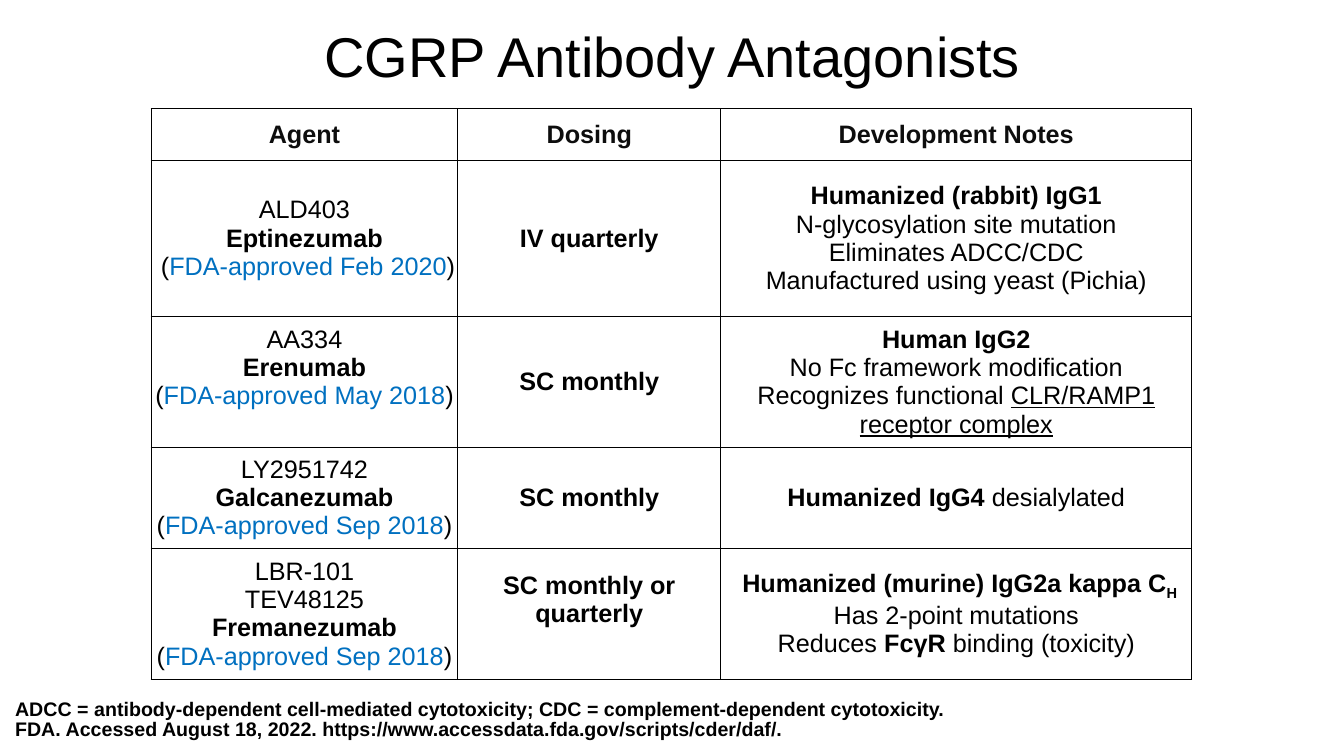
import pptx
import pptx.dml.color
import pptx.enum.text
import pptx.oxml
import pptx.oxml.ns
import pptx.util

WIDTH, HEIGHT = 13.33, 7.5
COLUMNS = [3.04, 2.61, 4.67]
ROWS = [0.51, 1.55, 1.27, 0.97, 1.26]
BLANK_LINE = 0.28
CENTER = pptx.enum.text.PP_ALIGN.CENTER
MIDDLE = pptx.enum.text.MSO_ANCHOR.MIDDLE
BOTTOM = pptx.enum.text.MSO_ANCHOR.BOTTOM
HEADINGS = ["Agent", "Dosing", "Development Notes"]

AGENTS = [
    (["ALD403"], "Eptinezumab", " (", "Feb 2020", "IV quarterly", [
        [("Humanized (rabbit) IgG1", "bold")],
        [("N-glycosylation site mutation", "")],
        [("Eliminates ADCC/CDC", "")],
        [("Manufactured using yeast (Pichia)", "")]]),
    (["AA334"], "Erenumab", "(", "May 2018", "SC monthly", [
        [("Human IgG2", "bold")],
        [("No Fc framework modification", "")],
        [("Recognizes functional ", ""), ("CLR/RAMP1 receptor complex", "underline")]]),
    (["LY2951742"], "Galcanezumab", "(", "Sep 2018", "SC monthly", [
        [("Humanized IgG4", "bold"), (" desialylated", "")]]),
    (["LBR-101", "TEV48125"], "Fremanezumab", "(", "Sep 2018",
     "SC monthly or quarterly", [
        [(" Humanized (murine) IgG2a kappa C", "bold"), ("H", "bold subscript")],
        [("Has 2-point mutations", "")],
        [("Reduces ", ""), ("FcγR ", "bold"), ("binding (toxicity)", "")]]),
]


def inches(value):
    return pptx.util.Inches(value)


def color(hex_code):
    return pptx.dml.color.RGBColor.from_string(hex_code)


def style_font(font, size, hex_code="000000", bold=False):
    font.name = "Arial"
    font.size = pptx.util.Pt(size)
    font.bold = bold
    font.color.rgb = color(hex_code)


def set_margins(holder, side, top, bottom):
    holder.margin_left = holder.margin_right = inches(side)
    holder.margin_top, holder.margin_bottom = inches(top), inches(bottom)


def place(shape, left, top, width, height):
    shape.left, shape.top = inches(left), inches(top)
    shape.width, shape.height = inches(width), inches(height)


def add_title(page, text):
    title = page.shapes.title
    place(title, 0, 0, WIDTH, 1.17)
    frame = title.text_frame
    frame.text = text
    frame.vertical_anchor = MIDDLE
    set_margins(frame, 0.05, 0.05, 0.05)
    para = frame.paragraphs[0]
    para.alignment = CENTER
    para.line_spacing = 0.9
    style_font(para.runs[0].font, 40)


def add_footnote(page, text):
    box = page.shapes.add_textbox(0, inches(6.92), inches(WIDTH), inches(0.58))
    frame = box.text_frame
    frame.word_wrap = True
    frame.vertical_anchor = BOTTOM
    set_margins(frame, 0.15, 0.15, 0.15)
    para = frame.paragraphs[0]
    para.text = text
    para.line_spacing = 0.85
    for span in para.runs:
        style_font(span.font, 14, bold=True)


def add_borders(cell):
    properties = cell._tc.get_or_add_tcPr()
    namespace = pptx.oxml.ns.nsdecls("a")
    for position, side in enumerate("LRTB"):
        line = pptx.oxml.parse_xml(
            f'<a:ln{side} {namespace} w="12700"><a:solidFill>'
            f'<a:srgbClr val="000000"/></a:solidFill></a:ln{side}>')
        properties.insert(position, line)


def fill_cell(cell, paragraphs, side=0, bottom=0.05, hex_code="000000"):
    cell.fill.background()
    add_borders(cell)
    cell.vertical_anchor = MIDDLE
    set_margins(cell, side, 0.05, bottom)
    frame = cell.text_frame
    for number, spans in enumerate(paragraphs):
        para = frame.add_paragraph() if number else frame.paragraphs[0]
        para.alignment = CENTER
        for text, style in spans:
            span = para.add_run()
            span.text = text
            style_font(span.font, 18, "0070C0" if "approval" in style else hex_code,
                       "bold" in style)
            if "underline" in style:
                span.font.underline = True
            if "subscript" in style:
                span._r.get_or_add_rPr().set("baseline", "-25000")


def add_agent_table(page):
    shape = page.shapes.add_table(len(ROWS), len(COLUMNS), inches(1.5), inches(1.08),
                                  inches(sum(COLUMNS)), inches(sum(ROWS)))
    table = shape.table
    table.first_row = table.horz_banding = False
    for column, width in zip(table.columns, COLUMNS):
        column.width = inches(width)
    for row, height in zip(table.rows, ROWS):
        row.height = inches(height)
    for index, heading in enumerate(HEADINGS):
        fill_cell(table.cell(0, index), [[(heading, "bold")]], hex_code="0D0D0D")
    for row, (codes, name, opening, date, dosing, notes) in enumerate(AGENTS, 1):
        agent = [[(code, "")] for code in codes]
        agent.append([(name, "bold")])
        agent.append([(opening, ""), (f"FDA-approved {date}", "approval"), (")", "")])
        raised_agent = BLANK_LINE if name == "Erenumab" else 0
        raised_dosing = BLANK_LINE if name == "Fremanezumab" else 0
        fill_cell(table.cell(row, 0), agent, bottom=0.05 + raised_agent)
        fill_cell(table.cell(row, 1), [[(dosing, "bold")]], bottom=0.05 + raised_dosing)
        fill_cell(table.cell(row, 2), notes, side=0.09)


def main():
    deck = pptx.Presentation()
    deck.slide_width, deck.slide_height = inches(WIDTH), inches(HEIGHT)
    page = deck.slides.add_slide(deck.slide_layouts[5])
    add_title(page, "CGRP Antibody Antagonists")
    add_footnote(page, "ADCC = antibody-dependent cell-mediated cytotoxicity; "
                       "CDC = complement-dependent cytotoxicity.\v"
                       "FDA. Accessed August 18, 2022. "
                       "https://www.accessdata.fda.gov/scripts/cder/daf/.")
    add_agent_table(page)
    deck.save("out.pptx")


if __name__ == "__main__":
    main()
